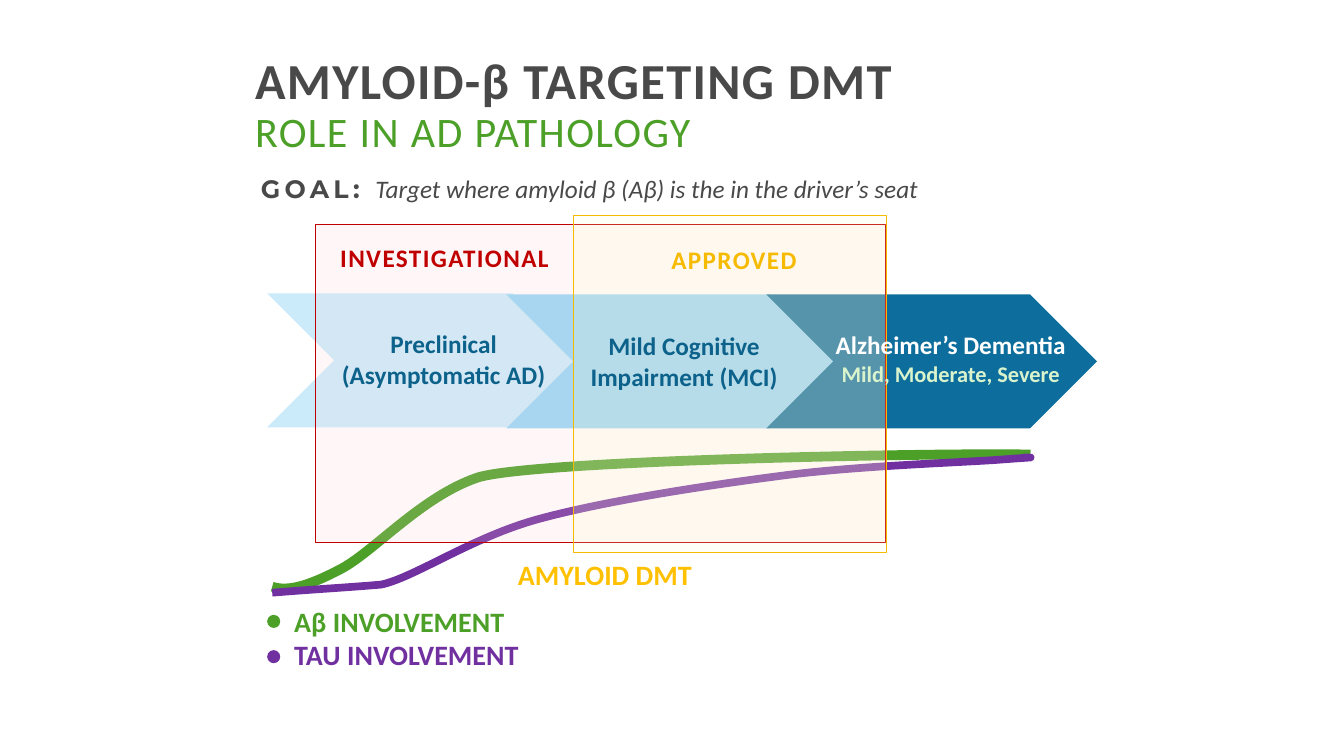
"""Build the slide on amyloid-β targeting DMT and its role in AD pathology."""
from lxml import etree
from pptx import Presentation
from pptx.dml.color import RGBColor
from pptx.enum.shapes import MSO_SHAPE
from pptx.enum.text import MSO_ANCHOR, PP_ALIGN
from pptx.oxml.ns import qn
from pptx.util import Inches, Pt

CHEVRON, RECTANGLE, OVAL = MSO_SHAPE.CHEVRON, MSO_SHAPE.RECTANGLE, MSO_SHAPE.OVAL
LEFT, CENTER = PP_ALIGN.LEFT, PP_ALIGN.CENTER
TOP, BOTTOM = MSO_ANCHOR.TOP, MSO_ANCHOR.BOTTOM

THEME = {
    "font": "Calibri", "accent_font": "Montserrat",
    "title": 36, "subtitle": 30, "legend": 20, "body": 18, "detail": 16,
    "gray": "494949", "green": "4CA027", "purple": "7030A0", "red": "C00000",
    "gold": "F6BB00", "amber": "FFC000", "navy": "0C628B", "white": "FFFFFF",
    "mint": "D9F3CD", "pink": "FFD5D5", "cream": "FEFFCA",
    "stage_1": "CBEBFB", "stage_2": "97D7F6", "stage_3": "0D6E9D",
}

TITLE = [[("AMYLOID-β TARGETING DMT\v", {"size": "title", "color": "gray", "spacing": 1}),
          ("ROLE IN AD PATHOLOGY",
           {"size": "subtitle", "color": "green", "bold": False, "spacing": 1})]]
GOAL = [[("GOAL: ", {"font": "accent_font", "color": "gray", "spacing": 3}),
         ("Target where amyloid β (Aβ) is the in the driver’s seat",
          {"color": "gray", "bold": False, "italic": True})]]

STAGES = [
    ((2.65, 2.91, 3.1, 1.33), "stage_1", (3.31, 3.22, 2.18, 0.68),
     [[("Preclinical", {"color": "navy"})], [("(Asymptomatic AD)", {"color": "navy"})]]),
    ((5.02, 2.92, 3.28, 1.33), "stage_2", (5.41, 3.24, 2.75, 0.68),
     [[("Mild Cognitive Impairment (MCI)", {"color": "navy"})]]),
    ((7.6, 2.92, 3.28, 1.33), "stage_3", (8.18, 3.23, 2.5, 0.88),
     [[("Alzheimer’s Dementia", {"color": "white"})],
      [("Mild, Moderate, Severe", {"color": "mint", "size": "detail"})]]),
]

INVOLVEMENT = [
    ("Aβ INVOLVEMENT", "green", 7, 6.1, 5.95,
     [(2.7, 5.82), (2.85, 5.87), (3.05, 5.82), (3.39, 5.64),
      (3.72, 5.46), (4.18, 4.93), (4.73, 4.74),
      (5.27, 4.56), (9.49, 4.49), (10.22, 4.51)]),
    ("TAU INVOLVEMENT", "purple", 5.5, 6.45, 6.28,
     [(2.7, 5.88), (3.06, 5.85), (3.42, 5.83), (3.78, 5.8),
      (4.11, 5.73), (4.68, 5.33), (5.34, 5.15),
      (6, 4.97), (6.98, 4.82), (7.75, 4.72),
      (8.51, 4.62), (9.52, 4.59), (9.92, 4.56),
      (10.32, 4.53), (10.24, 4.54), (10.15, 4.54)]),
]

WINDOWS = [
    ("INVESTIGATIONAL", "red", "pink", (3.13, 2.23, 5.65, 3.15), (3.13, 2.35, 2.56, 0.4), CENTER),
    ("APPROVED", "gold", "cream", (5.69, 2.14, 3.1, 3.34), (6.56, 2.37, 2.03, 0.4), LEFT),
]
WINDOW_OPACITY = 17
DOT = 0.13


def rgb(name):
    return RGBColor.from_string(THEME[name])


def add_text(slide, box, paragraphs, align=LEFT, anchor=TOP, inset=(0.1, 0.05), leading=None):
    frame = slide.shapes.add_textbox(*map(Inches, box)).text_frame
    frame.word_wrap = True
    frame.vertical_anchor = anchor
    frame.margin_left = frame.margin_right = Inches(inset[0])
    frame.margin_top = frame.margin_bottom = Inches(inset[1])
    for index, runs in enumerate(paragraphs):
        paragraph = frame.add_paragraph() if index else frame.paragraphs[0]
        paragraph.alignment = align
        paragraph.line_spacing = leading
        for words, look in runs:
            lines = words.split("\v")
            run = paragraph.add_run()
            run.text = lines[0]
            run.font.name = THEME[look.get("font", "font")]
            run.font.size = Pt(THEME[look.get("size", "body")])
            run.font.bold = look.get("bold", True)
            run.font.italic = look.get("italic", False)
            run.font.color.rgb = rgb(look["color"])
            if "spacing" in look:
                run.font._element.set("spc", str(look["spacing"] * 100))
            if len(lines) > 1:
                paragraph.add_line_break()


def add_filled(slide, kind, box, fill, line=None, opacity=None):
    shape = slide.shapes.add_shape(kind, *map(Inches, box))
    shape.shadow.inherit = False
    shape.fill.solid()
    shape.fill.fore_color.rgb = rgb(fill)
    if opacity:
        color = shape._element.spPr.find(qn("a:solidFill"))[0]
        etree.SubElement(color, qn("a:alpha")).set("val", str(opacity * 1000))
    if line:
        shape.line.color.rgb = rgb(line)
        shape.line.width = Pt(0.75)
    else:
        shape.line.fill.background()


def add_curve(slide, points, color, width):
    start, *controls = [(Inches(x), Inches(y)) for x, y in points]
    builder = slide.shapes.build_freeform(*start)
    builder.add_line_segments(controls, close=False)
    curve = builder.convert_to_shape()
    curve.shadow.inherit = False
    curve.fill.background()
    curve.line.color.rgb = rgb(color)
    curve.line.width = Pt(width)
    segments = list(curve._element.iter(qn("a:lnTo")))
    for first in range(0, len(segments), 3):
        bezier = etree.Element(qn("a:cubicBezTo"))
        segments[first].addprevious(bezier)
        for segment in segments[first:first + 3]:
            bezier.append(segment[0])
            segment.getparent().remove(segment)


def main():
    deck = Presentation()
    deck.slide_width, deck.slide_height = Inches(13.33), Inches(7.5)
    slide = deck.slides.add_slide(deck.slide_layouts[6])

    add_text(slide, (2.45, 0.43, 8.75, 1.16), TITLE, anchor=BOTTOM,
             inset=(0.08, 0.04), leading=0.9)
    for arrow, fill, _, _ in STAGES:
        add_filled(slide, CHEVRON, arrow, fill)
    for label, color, width, dot_top, label_top, points in INVOLVEMENT:
        add_curve(slide, points, color, width)
        add_filled(slide, OVAL, (2.65, dot_top, DOT, DOT), color)
        add_text(slide, (2.82, label_top, 3.94, 0.44),
                 [[(label, {"size": "legend", "color": color})]])
    add_text(slide, (2.49, 1.67, 7.22, 0.4), GOAL)
    add_text(slide, (4.45, 5.48, 3.1, 0.44),
             [[("AMYLOID DMT", {"size": "legend", "color": "amber"})]], align=CENTER)
    for label, color, tint, area, label_box, align in WINDOWS:
        add_filled(slide, RECTANGLE, area, tint, line=color, opacity=WINDOW_OPACITY)
        add_text(slide, label_box, [[(label, {"color": color, "spacing": 1})]], align=align)
    for _, _, label_box, label in STAGES:
        add_text(slide, label_box, label, align=CENTER, inset=(0.08, 0.04))

    deck.save("out.pptx")


if __name__ == "__main__":
    main()
